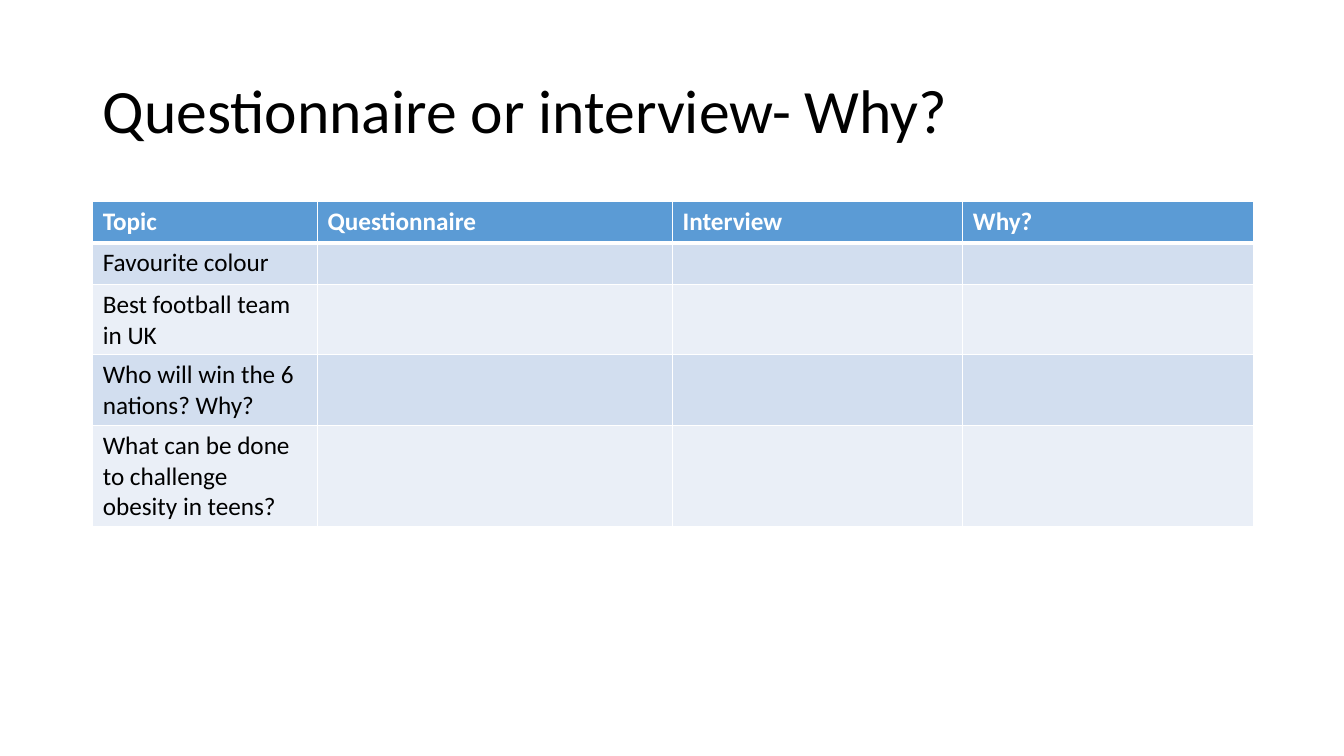
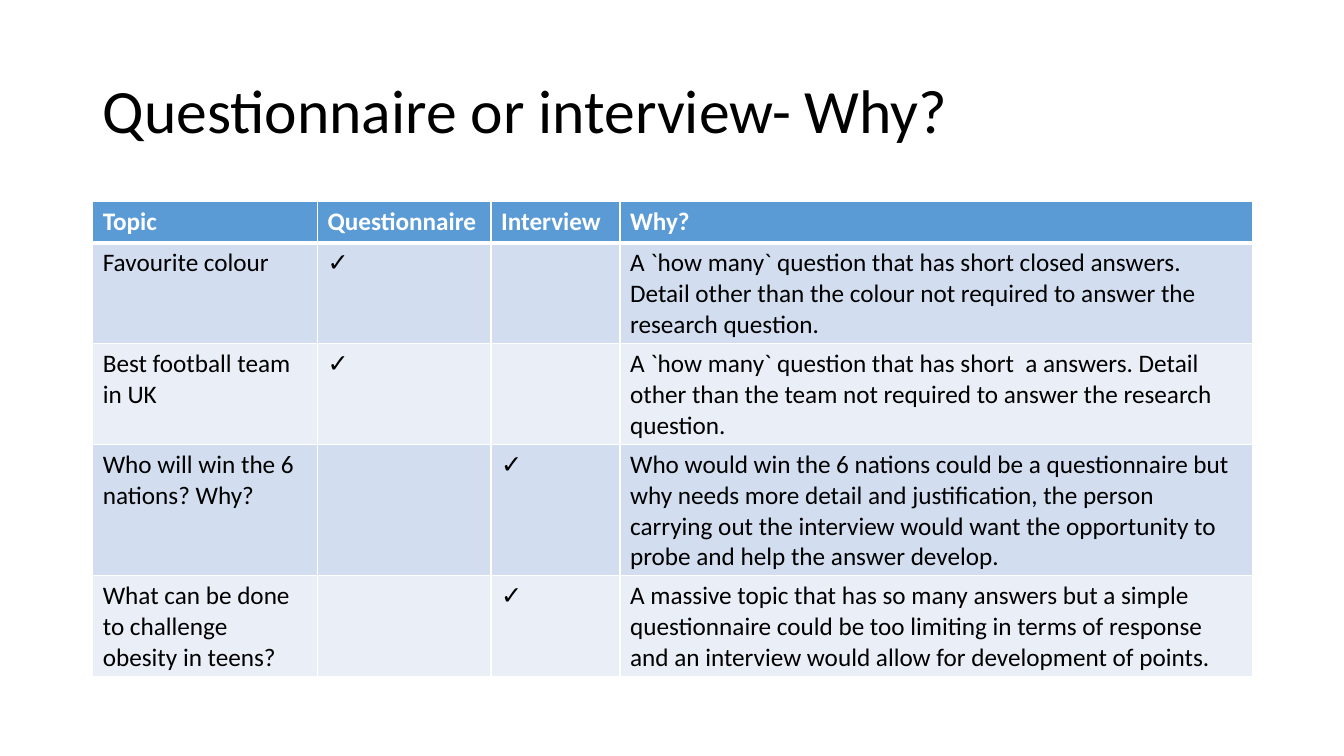
from lxml import etree
from pptx import Presentation
from pptx.dml.color import RGBColor
from pptx.enum.text import MSO_ANCHOR
from pptx.oxml.ns import qn
from pptx.util import Inches, Pt

MIDDLE = MSO_ANCHOR.MIDDLE
COLORS = {"text": "000000", "white": "FFFFFF", "head": "5B9BD5",
          "odd": "D2DEEF", "even": "EAEFF7"}
FONT = "Calibri"
LEFT, WIDTH = 0.92, 11.5
ROW = 0.41
TITLE = "Questionnaire or interview- Why?"
HEADS = ["Topic", "Questionnaire", "Interview", "Why?"]
TOPICS = ["Favourite colour", "Best football team in UK",
          "Who will win the 6 nations? Why?",
          "What can be done to challenge obesity in teens?"]
TICK = "✓"
ANSWERS = [
    (TICK, "", "A `how many` question that has short closed answers. Detail "
     "other than the colour not required to answer the research question."),
    (TICK, "", "A `how many` question that has short  a answers. Detail "
     "other than the team not required to answer the research question."),
    ("", TICK, "Who would win the 6 nations could be a questionnaire but why "
     "needs more detail and justification, the person carrying out the "
     "interview would want the opportunity to probe and help the answer "
     "develop."),
    ("", TICK, "A massive topic that has so many answers but a simple "
     "questionnaire could be too limiting in terms of response and an "
     "interview would allow for development of points."),
]


class Deck:
    """Holds the shared style and the current slide."""

    def __init__(self):
        self.prs = Presentation()
        self.prs.slide_width = Inches(13.33)
        self.prs.slide_height = Inches(7.5)

    def color(self, name):
        return RGBColor.from_string(COLORS[name])

    def style(self, frame, size, color, bold=False):
        for para in frame.paragraphs:
            for run in para.runs:
                font = run.font
                font.name, font.size, font.bold = FONT, Pt(size), bold
                font.color.rgb = self.color(color)

    def page(self, title):
        self.slide = self.prs.slides.add_slide(self.prs.slide_layouts[6])
        box = self.slide.shapes.add_textbox(
            Inches(LEFT), Inches(0.4), Inches(WIDTH), Inches(1.45))
        frame = box.text_frame
        frame.word_wrap = True
        frame.vertical_anchor = MIDDLE
        frame.text = title
        frame.paragraphs[0].line_spacing = 0.9
        self.style(frame, 44, "text")

    def border(self, cell, row):
        props = cell._tc.get_or_add_tcPr()
        wide = {(0, "lnB"), (1, "lnT")}
        for side in ("lnL", "lnR", "lnT", "lnB"):
            width = Pt(3 if (row, side) in wide else 1)
            line = etree.SubElement(props, qn(f"a:{side}"), w=str(width))
            fill = etree.SubElement(line, qn("a:solidFill"))
            etree.SubElement(fill, qn("a:srgbClr"), val=COLORS["white"])

    def table(self, widths, rows):
        grid = self.slide.shapes.add_table(
            len(rows), len(widths), Inches(LEFT), Inches(2),
            Inches(WIDTH), Inches(ROW * len(rows))).table
        for col, width in zip(grid.columns, widths):
            col.width = Inches(width)
        for i, row in enumerate(rows):
            grid.rows[i].height = Inches(ROW)
            head = i == 0
            fill = "head" if head else "odd" if i % 2 else "even"
            for j, text in enumerate(row):
                cell = grid.cell(i, j)
                self.border(cell, i)
                cell.fill.solid()
                cell.fill.fore_color.rgb = self.color(fill)
                if text:
                    cell.text_frame.text = text
                    self.style(cell.text_frame, 18,
                               "white" if head else "text", head)


def main():
    deck = Deck()
    pages = [([2.23, 3.52, 2.88, 2.88], [("", "", "")] * len(TOPICS)),
             ([2.23, 1.72, 1.28, 6.27], ANSWERS)]
    for widths, answers in pages:
        deck.page(TITLE)
        body = [[topic, *cells] for topic, cells in zip(TOPICS, answers)]
        deck.table(widths, [HEADS, *body])
    deck.prs.save("out.pptx")


if __name__ == "__main__":
    main()
